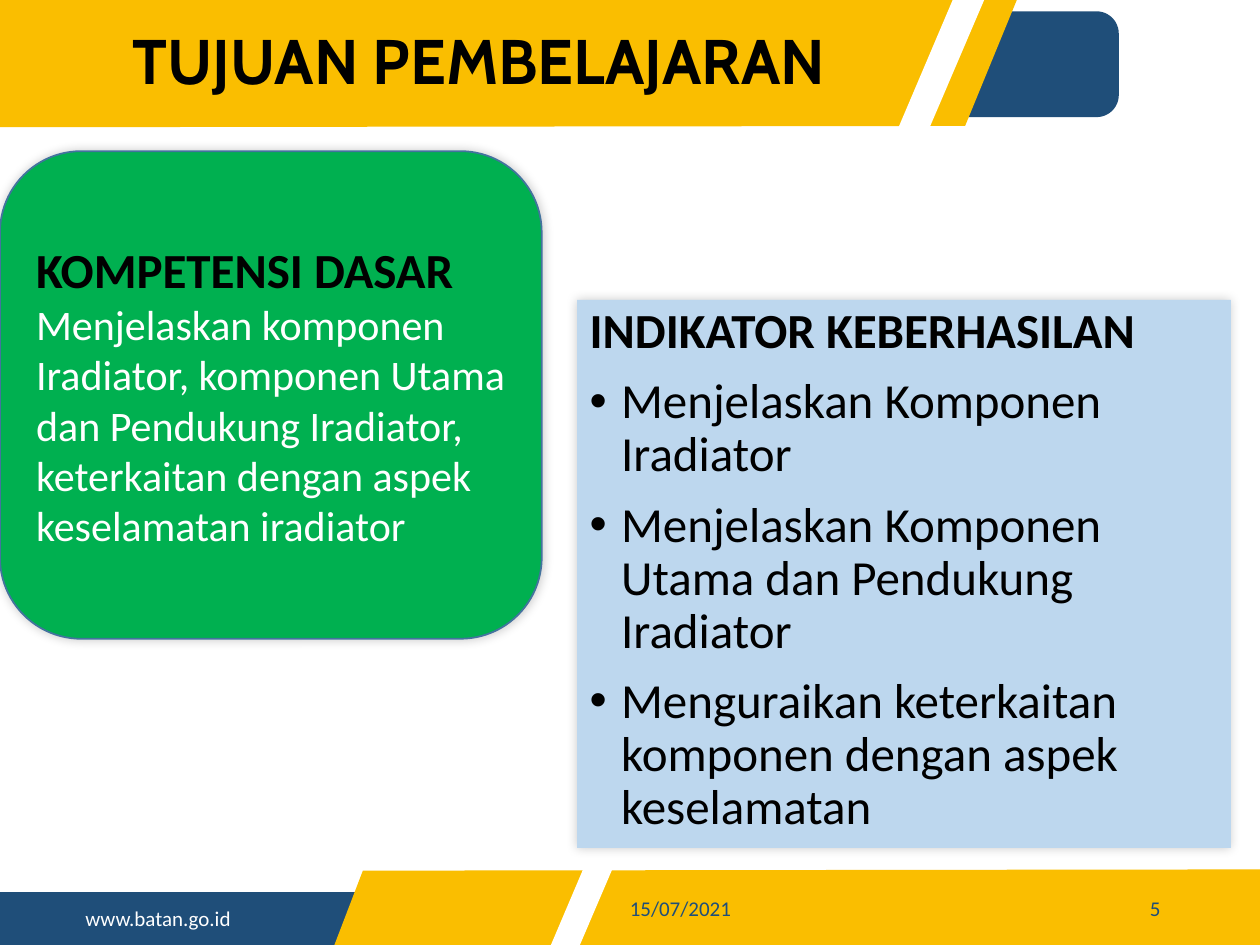
"""Build the learning objectives slide with its banner, footer and two panels."""
import pptx
import pptx.dml.color
import pptx.enum.shapes
import pptx.enum.text
import pptx.oxml
import pptx.oxml.ns
import pptx.util
from pptx.util import Inches

NAVY, GOLD, WHITE, BLACK = "1F4E79", "FABE00", "FFFFFF", "000000"
NS = pptx.oxml.ns.nsdecls("a")
SHAPE = pptx.enum.shapes.MSO_SHAPE
ALIGN = pptx.enum.text.PP_ALIGN
ANCHOR = pptx.enum.text.MSO_ANCHOR


def rgb(color):
    """Turn a hex string into a colour."""
    return pptx.dml.color.RGBColor.from_string(color)


def style(p, size, color, bold=False, font="Calibri", align=ALIGN.LEFT):
    """Format a paragraph and its runs."""
    p.alignment = align
    for r in p.runs:
        r.font.name, r.font.size, r.font.bold = font, pptx.util.Pt(size), bold
        r.font.color.rgb = rgb(color)


prs = pptx.Presentation()
prs.slide_width, prs.slide_height = Inches(10), Inches(7.5)
s = prs.slides.add_slide(prs.slide_layouts[1])
title, body = s.shapes.title, s.placeholders[1]

bar = s.shapes.add_shape(SHAPE.RECTANGLE, Inches(0), Inches(7.08), Inches(2.97), Inches(0.43))
tab = s.shapes.add_shape(SHAPE.ROUNDED_RECTANGLE, Inches(6.92), Inches(0.09), Inches(1.96), Inches(0.84))
tab.adjustments[0] = 0.21
outlines = [
    (GOLD, [(2.88, 6.91), (10, 6.9), (10, 7.51), (2.65, 7.51)]),
    (GOLD, [(0, 0), (8.07, 0), (7.66, 1), (0, 1.01)]),
    (WHITE, [(7.57, -0.02), (7.82, -0.02), (4.59, 7.53), (4.36, 7.53)]),
]
bands = [(bar, NAVY), (tab, NAVY)]
for color, points in outlines:
    points = [(Inches(x), Inches(y)) for x, y in points]
    fb = s.shapes.build_freeform(*points[0])
    fb.add_line_segments(points[1:], close=True)
    bands.append((fb.convert_to_shape(), color))
for sp, color in bands:
    sp.shadow.inherit = False
    sp.fill.solid()
    sp.fill.fore_color.rgb = rgb(color)
    sp.line.fill.background()

labels = [
    ("www.batan.go.id", 0.58, 7.14, 2.04, 0.3, WHITE, ALIGN.LEFT),
    ("15/07/2021", 4.9, 7.01, 2.43, 0.4, NAVY, ALIGN.LEFT),
    ("5", 8.68, 7.01, 0.63, 0.4, NAVY, ALIGN.RIGHT),
]
for text, x, y, w, h, color, align in labels:
    tf = s.shapes.add_textbox(Inches(x), Inches(y), Inches(w), Inches(h)).text_frame
    tf.word_wrap = True
    tf.vertical_anchor = ANCHOR.MIDDLE
    tf.text = text
    style(tf.paragraphs[0], 12, color, align=align)

title.left, title.top, title.width, title.height = Inches(0.69), Inches(0.09), Inches(6.22), Inches(0.84)
tf = title.text_frame
tf.text = "TUJUAN PEMBELAJARAN"
tf.auto_size = pptx.enum.text.MSO_AUTO_SIZE.NONE
tf.vertical_anchor = ANCHOR.MIDDLE
tf.paragraphs[0].line_spacing = 0.9
style(tf.paragraphs[0], 36, BLACK, True, "Cabin", ALIGN.CENTER)

card = s.shapes.add_shape(SHAPE.ROUNDED_RECTANGLE, Inches(0), Inches(1.2), Inches(4.3), Inches(3.87))
card.line.color.rgb = rgb("43739E")
card.line.width = pptx.util.Pt(1)
tf = card.text_frame
tf.word_wrap = True
tf.vertical_anchor = ANCHOR.MIDDLE
tf.text = (
    "KOMPETENSI DASAR\n"
    "Menjelaskan komponen Iradiator, komponen Utama dan Pendukung Iradiator, "
    "keterkaitan dengan aspek keselamatan iradiator"
)
style(tf.paragraphs[0], 28, BLACK, True)
style(tf.paragraphs[1], 24, WHITE)

body.left, body.top, body.width, body.height = Inches(4.58), Inches(2.38), Inches(5.19), Inches(4.35)
tf = body.text_frame
tf.text = "\n".join([
    "INDIKATOR KEBERHASILAN",
    "Menjelaskan Komponen Iradiator",
    "Menjelaskan Komponen Utama dan Pendukung Iradiator",
    "Menguraikan keterkaitan komponen dengan aspek keselamatan",
])
tf.auto_size = pptx.enum.text.MSO_AUTO_SIZE.NONE
tf.vertical_anchor = ANCHOR.TOP
for i, p in enumerate(tf.paragraphs):
    indent = Inches(0.25) if i else 0
    pPr = p._p.get_or_add_pPr()
    pPr.set("marL", str(indent))
    pPr.set("indent", str(-indent))
    bullets = [f'<a:buFont {NS} typeface="Arial"/>', f'<a:buChar {NS} char="•"/>'] if i else [f"<a:buNone {NS}/>"]
    for xml in bullets:
        pPr.append(pptx.oxml.parse_xml(xml))
    p.line_spacing = 0.9
    p.space_before = pptx.util.Pt(10 if i else 0)
    style(p, 28, BLACK, bold=not i)

for sp, color in [(card, "00B050"), (body, "BDD7EE")]:
    sp.fill.solid()
    sp.fill.fore_color.rgb = rgb(color)
    sp._element.spPr.append(pptx.oxml.parse_xml(
        f'<a:effectLst {NS}><a:outerShdw blurRad="{pptx.util.Pt(6)}" dist="0" dir="18900000" algn="ctr" rotWithShape="0">'
        '<a:srgbClr val="000000"><a:alpha val="20000"/></a:srgbClr></a:outerShdw></a:effectLst>'))

for sp in (title, card, body):
    s.shapes._spTree.append(sp._element)

prs.save("out.pptx")
